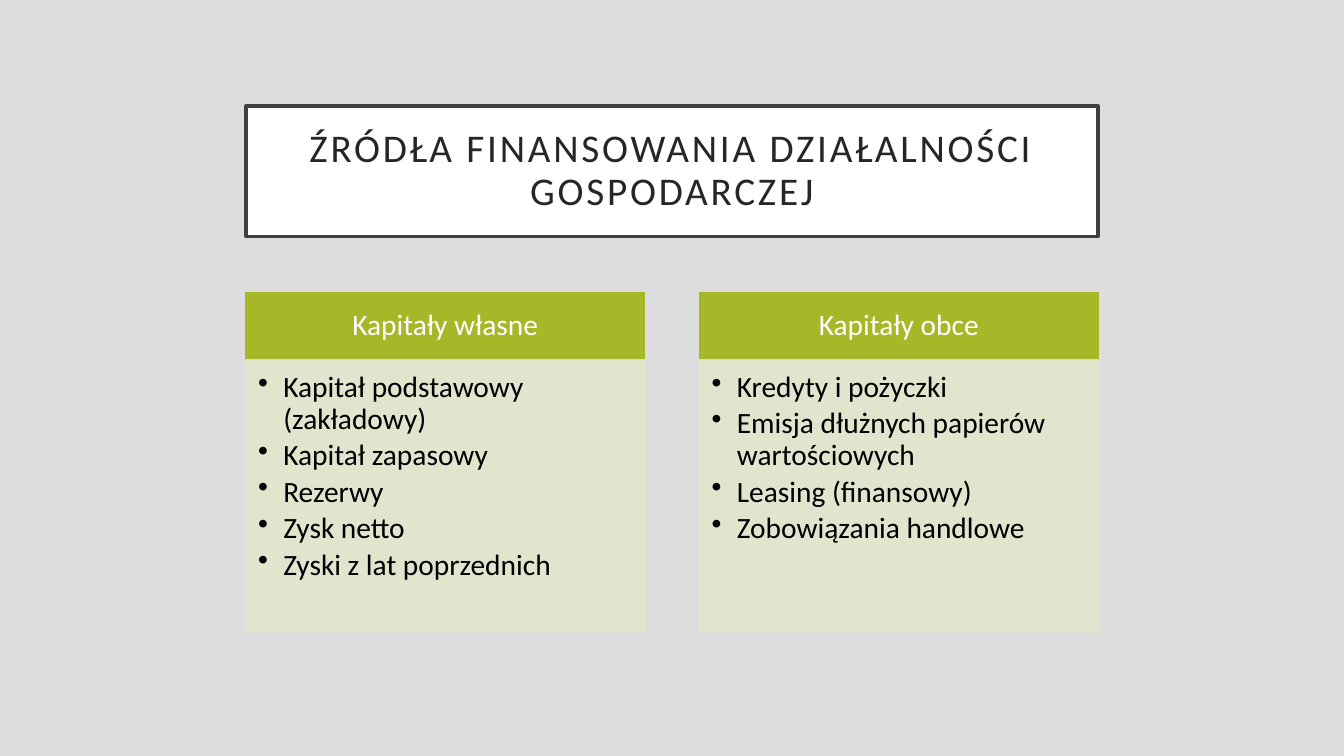
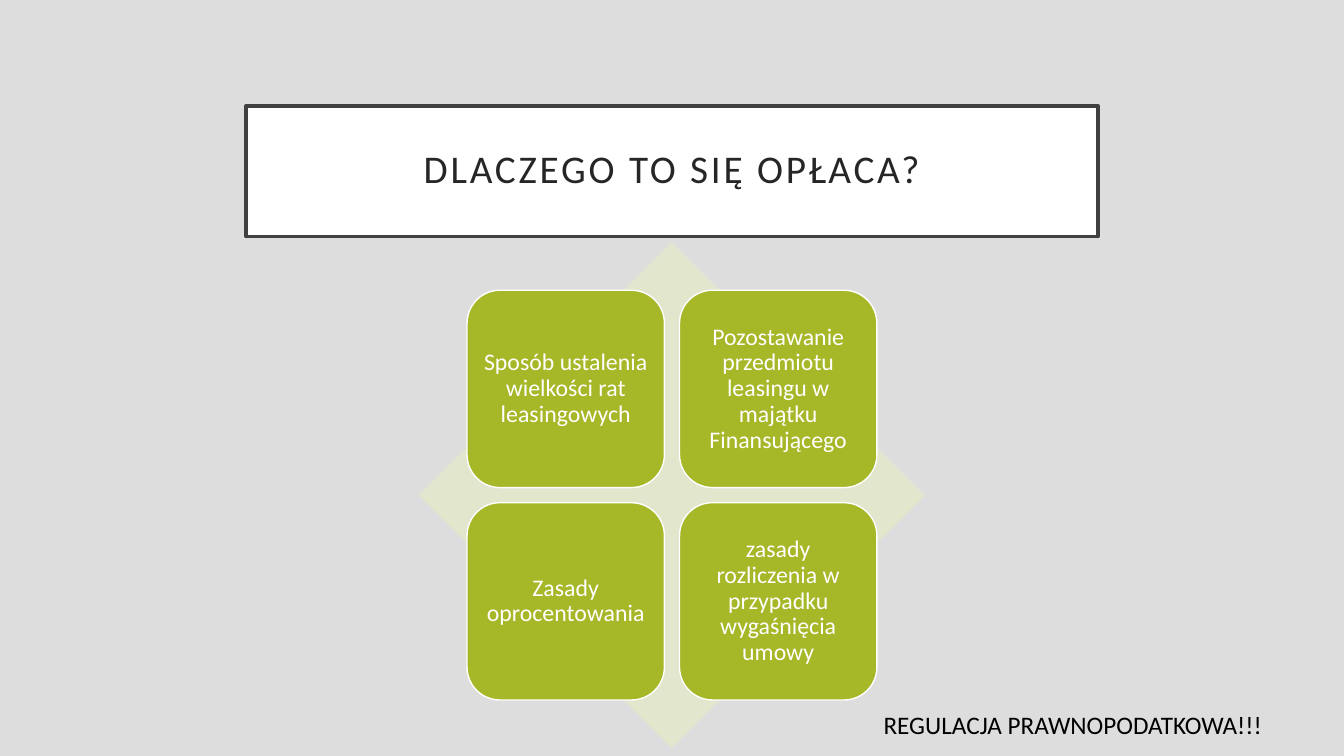
import dataclasses
import itertools

import lxml.etree
import pptx
import pptx.dml.color
import pptx.enum.shapes
import pptx.enum.text
import pptx.oxml.ns
import pptx.util

SHAPE = pptx.enum.shapes.MSO_SHAPE
ALIGN = pptx.enum.text.PP_ALIGN
ANCHOR = pptx.enum.text.MSO_ANCHOR
qn = pptx.oxml.ns.qn


@dataclasses.dataclass(frozen=True)
class Theme:
    font: str = "Calibri"
    background: str = "DDDDDD"
    white: str = "FFFFFF"
    black: str = "000000"
    title_ink: str = "262626"
    title_border: str = "404040"
    accent: str = "A6B727"
    tint: str = "E1E6CD"
    title_size: int = 28
    list_size: int = 21
    note_size: int = 18
    tile_size: int = 17
    tint_opacity: int = 90
    line_spacing: float = 0.9
    list_gap: float = 3.4
    list_indent: float = 0.25


class Deck:
    LEFT, WIDTH, GAP = 0.183, 0.634, 0.041
    COLUMN = (WIDTH - GAP) / 2

    def __init__(self, theme):
        self.theme = theme
        self.presentation = pptx.Presentation()
        self.presentation.slide_width = pptx.util.Inches(13.33)
        self.presentation.slide_height = pptx.util.Inches(7.5)
        self.fill(self.presentation.slide_master.background, theme.background)
        self.slide = None

    def box(self, left, top, width, height):
        across, down = self.presentation.slide_width, self.presentation.slide_height
        return [round(share * length) for share, length in
                zip((left, top, width, height), (across, down, across, down))]

    def square(self, center_x, center_y, side):
        ratio = self.presentation.slide_height / self.presentation.slide_width
        return self.box(center_x - side * ratio / 2, center_y - side / 2, side * ratio, side)

    def fill(self, target, color):
        target.fill.solid()
        target.fill.fore_color.rgb = pptx.dml.color.RGBColor.from_string(color)

    def outline(self, shape, color, width=1):
        if color is None:
            shape.line.fill.background()
            return
        shape.line.color.rgb = pptx.dml.color.RGBColor.from_string(color)
        shape.line.width = pptx.util.Pt(width)

    def shape(self, preset, place, color, border=None):
        shape = self.slide.shapes.add_shape(preset, *place)
        shape.shadow.inherit = False
        self.fill(shape, color)
        self.outline(shape, border)
        return shape

    def set_text(self, shape, lines, size, color, align=ALIGN.CENTER, anchor=ANCHOR.MIDDLE,
                 insets=(0.1, 0.05, 0.1, 0.05), bullets=False, wrap=True):
        frame = shape.text_frame
        frame.word_wrap = wrap
        frame.auto_size = pptx.enum.text.MSO_AUTO_SIZE.NONE
        frame.vertical_anchor = anchor
        (frame.margin_left, frame.margin_top,
         frame.margin_right, frame.margin_bottom) = map(pptx.util.Inches, insets)
        frame.text = "\n".join(lines)
        for paragraph in frame.paragraphs:
            if bullets:
                self.bullet(paragraph)
            paragraph.alignment = align
            paragraph.line_spacing = self.theme.line_spacing
            paragraph.font.name = self.theme.font
            paragraph.font.size = pptx.util.Pt(size)
            paragraph.font.color.rgb = pptx.dml.color.RGBColor.from_string(color)

    def bullet(self, paragraph):
        indent = pptx.util.Inches(self.theme.list_indent)
        properties = paragraph._p.get_or_add_pPr()
        properties.set("marL", str(indent))
        properties.set("indent", str(-indent))
        lxml.etree.SubElement(properties, qn("a:buChar")).set("char", "•")
        paragraph.space_after = pptx.util.Pt(self.theme.list_gap)

    def titled_slide(self, text):
        self.slide = self.presentation.slides.add_slide(self.presentation.slide_layouts[5])
        title = self.slide.shapes.title
        title.left, title.top, title.width, title.height = self.box(
            self.LEFT, 0.14, self.WIDTH, 0.173)
        self.fill(title, self.theme.white)
        self.outline(title, self.theme.title_border, 2.5)
        self.set_text(title, [text], self.theme.title_size, self.theme.title_ink,
                      insets=[0.2] * 4)
        for run in title.text_frame.paragraphs[0].runs:
            run._r.get_or_add_rPr().set("spc", "200")

    def list_column(self, index, heading, items):
        theme = self.theme
        left = self.LEFT + index * (self.COLUMN + self.GAP)
        header = self.shape(SHAPE.RECTANGLE, self.box(left, 0.387, self.COLUMN, 0.088),
                            theme.accent, theme.accent)
        self.set_text(header, [heading], theme.list_size, theme.white,
                      insets=(0.16, 0.09, 0.16, 0.09))
        body = self.shape(SHAPE.RECTANGLE, self.box(left, 0.476, self.COLUMN, 0.36),
                          theme.tint, theme.tint)
        for color in body._element.spPr.iter(qn("a:srgbClr")):
            lxml.etree.SubElement(color, qn("a:alpha")).set("val", str(theme.tint_opacity * 1000))
        self.set_text(body, items, theme.list_size, theme.black, ALIGN.LEFT, ANCHOR.TOP,
                      (0.12, 0.12, 0.16, 0.18), bullets=True)

    def diamond_matrix(self, labels, center=(0.5, 0.655), diamond=0.669, tile=0.261, gap=0.02):
        theme = self.theme
        ratio = self.presentation.slide_height / self.presentation.slide_width
        offset = (tile + gap) / 2
        self.shape(SHAPE.DIAMOND, self.square(*center, diamond), theme.tint)
        for label, (row, column) in zip(labels, itertools.product((-1, 1), repeat=2)):
            place = self.square(center[0] + column * offset * ratio,
                                center[1] + row * offset, tile)
            card = self.shape(SHAPE.ROUNDED_RECTANGLE, place, theme.accent, theme.white)
            self.set_text(card, [label], theme.tile_size, theme.white, insets=[0.07] * 4)

    def note(self, text, left, top, width, height):
        remark = self.slide.shapes.add_textbox(*self.box(left, top, width, height))
        self.set_text(remark, [text], self.theme.note_size, self.theme.black,
                      ALIGN.LEFT, ANCHOR.TOP, wrap=False)


def main():
    deck = Deck(Theme())

    deck.titled_slide("ŹRÓDŁA FINANSOWANIA DZIAŁALNOŚCI GOSPODARCZEJ")
    capital = {
        "Kapitały własne": ["Kapitał podstawowy (zakładowy)", "Kapitał zapasowy", "Rezerwy",
                            "Zysk netto", "Zyski z lat poprzednich"],
        "Kapitały obce": ["Kredyty i pożyczki", "Emisja dłużnych papierów wartościowych",
                          "Leasing (finansowy)", "Zobowiązania handlowe"],
    }
    for index, (heading, items) in enumerate(capital.items()):
        deck.list_column(index, heading, items)

    deck.titled_slide("DLACZEGO TO SIĘ OPŁACA?")
    deck.diamond_matrix([
        "Sposób ustalenia wielkości rat leasingowych",
        "Pozostawanie przedmiotu leasingu w majątku Finansującego",
        "Zasady oprocentowania",
        "zasady rozliczenia w przypadku wygaśnięcia umowy",
    ])
    deck.note("REGULACJA PRAWNOPODATKOWA!!!", 0.65, 0.936, 0.334, 0.053)

    deck.presentation.save("out.pptx")


if __name__ == "__main__":
    main()
